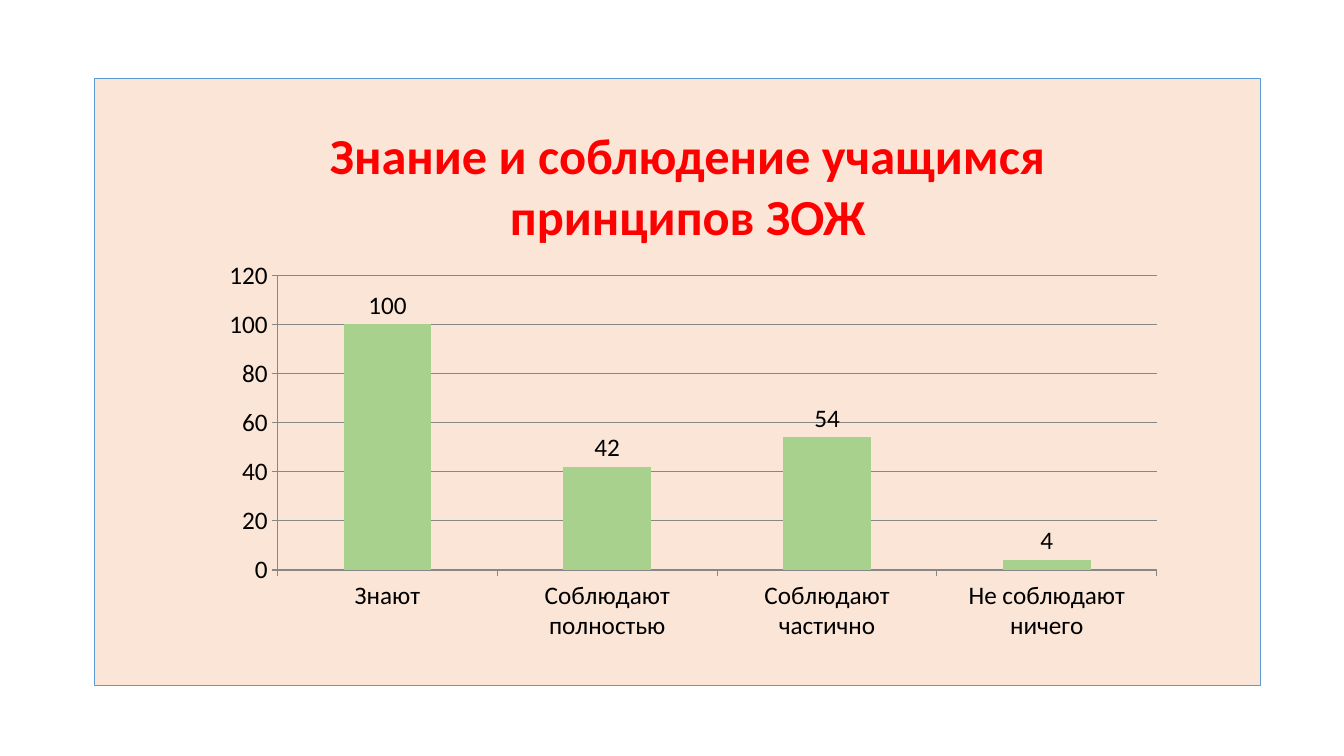
from pptx import Presentation
from pptx.chart.data import CategoryChartData
from pptx.dml.color import RGBColor
from pptx.enum.chart import XL_CHART_TYPE, XL_LABEL_POSITION, XL_TICK_MARK
from pptx.enum.shapes import MSO_SHAPE
from pptx.enum.text import MSO_ANCHOR, PP_ALIGN
from pptx.util import Emu, Pt

PX = 9525  # EMU per px, 96 px to the inch
FONT = "Calibri"


def px(*lengths):
    return [Emu(length * PX) for length in lengths]


def color(hex_code):
    return RGBColor.from_string(hex_code)


prs = Presentation()
prs.slide_width, prs.slide_height = px(1280, 720)
slide = prs.slides.add_slide(prs.slide_layouts[5])

# Title
title = slide.shapes.title
title.left, title.top, title.width, title.height = px(200, 120, 910, 112)
title.text_frame.text = "Знание и соблюдение учащимся принципов ЗОЖ"
title.text_frame.word_wrap = True
title.text_frame.vertical_anchor = MSO_ANCHOR.MIDDLE
heading = title.text_frame.paragraphs[0]
heading.alignment = PP_ALIGN.CENTER
heading.font.name = FONT
heading.font.size = Pt(36)
heading.font.bold = True
heading.font.color.rgb = color("FF0000")

# Background panel, placed behind the title
panel = slide.shapes.add_shape(MSO_SHAPE.RECTANGLE, *px(90, 75, 1110, 578))
panel.shadow.inherit = False
panel.fill.solid()
panel.fill.fore_color.rgb = color("FBE5D6")
panel.line.color.rgb = color("5B9BD5")
panel.line.width = Pt(0.5)
title.element.addprevious(panel.element)

# Survey chart
survey = CategoryChartData()
survey.categories = ["Знают", "Соблюдают полностью", "Соблюдают частично", "Не соблюдают ничего"]
survey.add_series("Series 1", [100, 42, 54, 4])
chart = slide.shapes.add_chart(
    XL_CHART_TYPE.COLUMN_CLUSTERED, *px(200, 240, 920, 378), survey
).chart
chart.has_title = False
chart.has_legend = False
chart.font.name = FONT
chart.font.size = Pt(18)
chart.font.color.rgb = color("000000")

# Columns and their values
columns = chart.plots[0]
columns.gap_width = 150
columns.vary_by_categories = False
answers = columns.series[0]
answers.format.fill.solid()
answers.format.fill.fore_color.rgb = color("A9D18E")
answers.data_labels.show_value = True
answers.data_labels.position = XL_LABEL_POSITION.OUTSIDE_END

# Axes and gridlines
chart.value_axis.minimum_scale = 0
chart.value_axis.maximum_scale = 120
chart.value_axis.major_unit = 20
chart.value_axis.has_major_gridlines = True
for axis in (chart.category_axis, chart.value_axis):
    axis.major_tick_mark = XL_TICK_MARK.OUTSIDE
    axis.minor_tick_mark = XL_TICK_MARK.NONE
for rule in (chart.category_axis, chart.value_axis, chart.value_axis.major_gridlines):
    rule.format.line.color.rgb = color("878787")
    rule.format.line.width = Pt(0.75)

prs.save("out.pptx")
